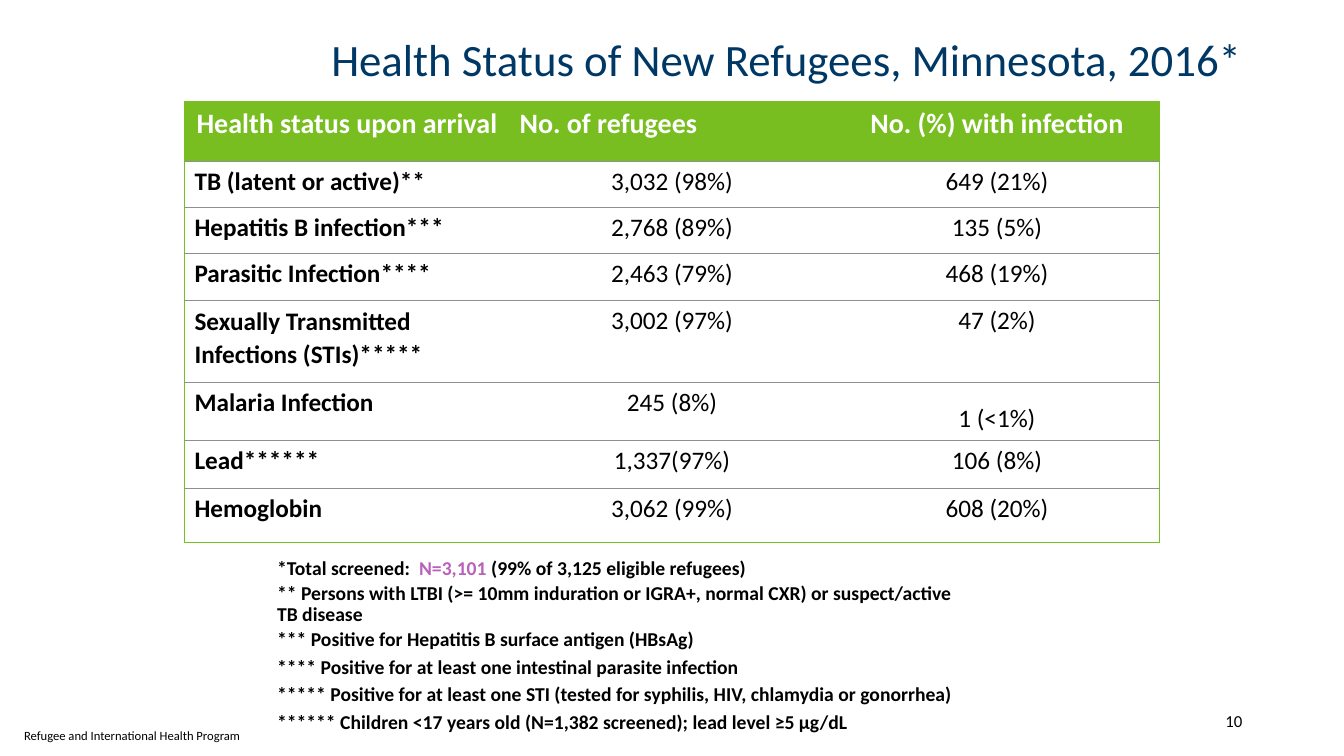
from lxml.etree import SubElement
from pptx import Presentation
from pptx.dml.color import RGBColor
from pptx.enum.text import MSO_ANCHOR, PP_ALIGN
from pptx.oxml import parse_xml
from pptx.oxml.ns import nsdecls
from pptx.util import Inches, Pt

NAVY = RGBColor(0x00, 0x38, 0x65)
GREEN = RGBColor(0x78, 0xBE, 0x21)
GRAY = RGBColor(0x8F, 0x8F, 0x8F)
PURPLE = RGBColor(0xB8, 0x62, 0xBB)
BLACK = RGBColor(0x00, 0x00, 0x00)
WHITE = RGBColor(0xFF, 0xFF, 0xFF)

HEADERS = ["Health status upon arrival", "No. of refugees", "No. (%) with infection"]
RESULTS = [
    ("TB (latent or active)**", "3,032 (98%)", "649 (21%)"),
    ("Hepatitis B infection***", "2,768 (89%)", "135 (5%)"),
    ("Parasitic Infection****", "2,463 (79%)", "468 (19%)"),
    ("Sexually Transmitted\nInfections (STIs)*****", "3,002 (97%)", "47 (2%)"),
    ("Malaria Infection", "245 (8%)", "1 (<1%)"),
    ("Lead******", "1,337(97%)", "106 (8%)"),
    ("Hemoglobin", "3,062 (99%)", "608 (20%)"),
]
ROW_HEIGHTS = [0.59, 0.46, 0.46, 0.46, 0.82, 0.57, 0.48, 0.53]
FOOTNOTES = [
    [("*Total screened:  ", BLACK), ("N=3,101 ", PURPLE),
     ("(99% of 3,125 eligible refugees)", BLACK)],
    [("** Persons with LTBI (>= 10mm induration or IGRA+, normal CXR) "
      "or suspect/active TB disease", BLACK)],
    [("*** Positive for Hepatitis B surface antigen (HBsAg)", BLACK)],
    [("**** Positive for at least one intestinal parasite infection", BLACK)],
    [("***** Positive for at least one STI (tested for syphilis, HIV, "
      "chlamydia or gonorrhea)", BLACK)],
    [("****** Children <17 years old (N=1,382 screened); lead level ≥5 µg/dL", BLACK)],
]


class SlideBuilder:
    font_name = "Calibri"

    def __init__(self, slide):
        self.slide = slide

    def style(self, para, size, color, bold=False, align=PP_ALIGN.LEFT, spacing=1.0):
        para.alignment = align
        para.line_spacing = spacing
        para.font.name = self.font_name
        para.font.size = Pt(size)
        para.font.bold = bold
        para.font.color.rgb = color

    def frame(self, left, top, width, height, anchor=MSO_ANCHOR.TOP):
        box = self.slide.shapes.add_textbox(
            Inches(left), Inches(top), Inches(width), Inches(height))
        box.text_frame.word_wrap = True
        box.text_frame.vertical_anchor = anchor
        return box.text_frame

    def text(self, words, place, size, color, align=PP_ALIGN.LEFT,
             anchor=MSO_ANCHOR.TOP, spacing=1.0):
        para = self.frame(*place, anchor).paragraphs[0]
        para.text = words
        self.style(para, size, color, align=align, spacing=spacing)

    def footnotes(self, notes, place, size, tight_count):
        frame = self.frame(*place)
        for index, spans in enumerate(notes):
            para = frame.add_paragraph() if index else frame.paragraphs[0]
            for words, color in spans:
                span = para.add_run()
                span.text = words
                if color != BLACK:
                    span.font.color.rgb = color
            self.style(para, size, BLACK, bold=True,
                       spacing=0.9 if index < tight_count else 1.0)
            if index:
                para.space_before = Pt(0.2 * size)

    def borders(self, cell, colors):
        properties = cell._tc.get_or_add_tcPr()
        for position, (side, color) in enumerate(zip("LRTB", colors)):
            line = parse_xml(f'<a:ln{side} {nsdecls("a")} w="9525"/>')
            namespace = line.nsmap["a"]
            if color is None:
                SubElement(line, f"{{{namespace}}}noFill")
            else:
                fill = SubElement(line, f"{{{namespace}}}solidFill")
                SubElement(fill, f"{{{namespace}}}srgbClr", val=str(color))
            properties.insert(position, line)

    def cell(self, cell, words, size, color, bold, align, spacing=1.0):
        cell.text = words
        for para in cell.text_frame.paragraphs:
            self.style(para, size, color, bold, align, spacing)

    def table(self, headers, results, place, row_heights):
        last_row, last_column = len(results), len(headers) - 1
        table = self.slide.shapes.add_table(
            last_row + 1, last_column + 1, *map(Inches, place)).table
        table.horz_banding = False
        for row, height in zip(table.rows, row_heights):
            row.height = Inches(height)
        for r, values in enumerate([headers, *results]):
            for c, words in enumerate(values):
                cell = table.cell(r, c)
                if r == 0:
                    cell.fill.solid()
                    cell.fill.fore_color.rgb = GREEN
                    align = PP_ALIGN.LEFT if c == 1 else PP_ALIGN.CENTER
                    self.cell(cell, words, 20, WHITE, True, align)
                else:
                    cell.fill.background()
                    align = PP_ALIGN.CENTER if c else PP_ALIGN.LEFT
                    spacing = 1.5 if words.startswith("1 (") else 1.05 if "\n" in words else 1.0
                    self.cell(cell, words, 18, BLACK, c == 0, align, spacing)
                self.borders(cell, (
                    GREEN if c == 0 else None,
                    GREEN if c == last_column else None,
                    GREEN if r == 0 else GRAY,
                    GREEN if r == last_row else GRAY))


def main():
    deck = Presentation()
    deck.slide_width, deck.slide_height = Inches(13.33), Inches(7.5)
    page = SlideBuilder(deck.slides.add_slide(deck.slide_layouts[6]))
    page.text("Refugee and International Health Program", (0.14, 7.17, 2.7, 0.25), 9, BLACK)
    page.text("Health Status of New Refugees, Minnesota, 2016*", (0.92, 0.12, 11.5, 1),
              32, NAVY, PP_ALIGN.RIGHT, MSO_ANCHOR.MIDDLE, 0.9)
    page.text("10", (10.82, 6.95, 1.6, 0.4), 12, BLACK, PP_ALIGN.RIGHT, MSO_ANCHOR.MIDDLE)
    page.table(HEADERS, RESULTS, (1.83, 1.01, 9.67, 4.37), ROW_HEIGHTS)
    page.footnotes(FOOTNOTES, (2.65, 5.49, 7.01, 1.89), 14, 3)
    deck.save("out.pptx")


if __name__ == "__main__":
    main()
